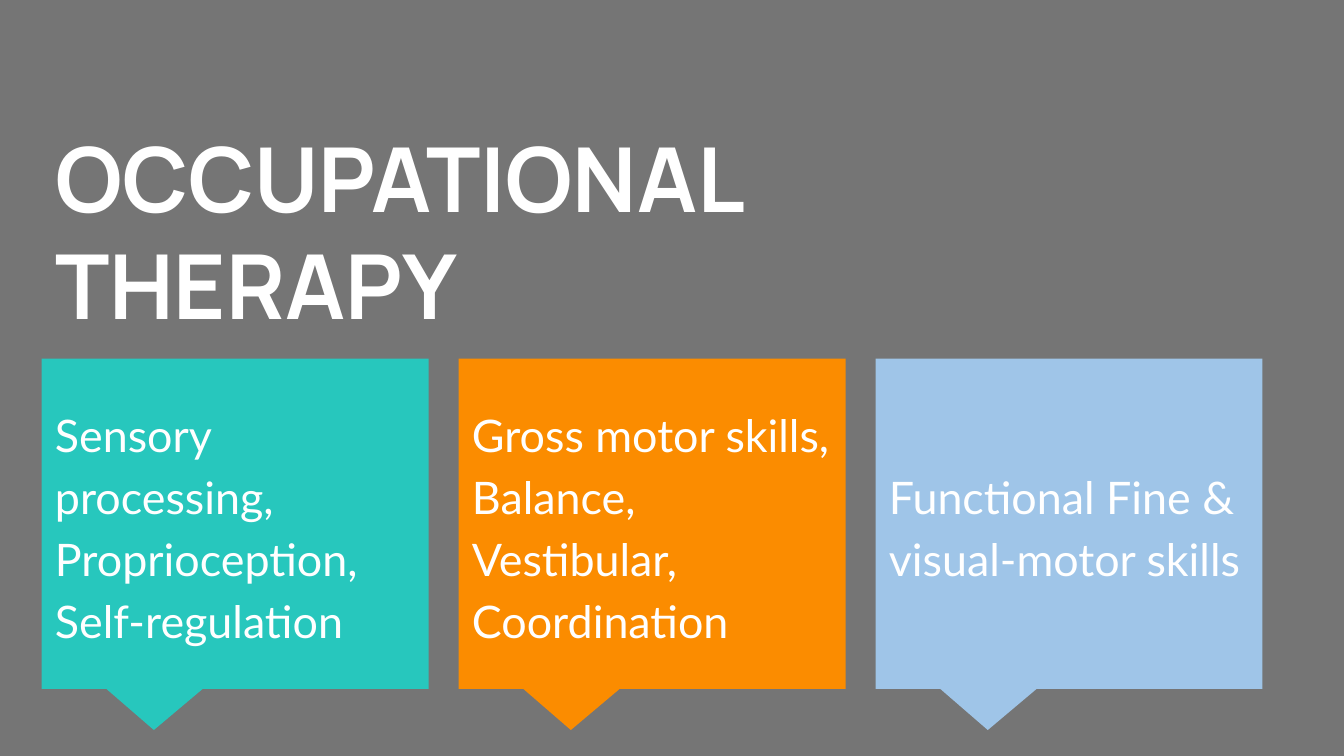
from pptx import Presentation
from pptx.dml.color import RGBColor
from pptx.enum.shapes import MSO_SHAPE
from pptx.enum.text import MSO_ANCHOR, PP_ALIGN
from pptx.util import Cm, Pt

GRAY = RGBColor(0x75, 0x75, 0x75)
WHITE = RGBColor(0xFF, 0xFF, 0xFF)
TEAL = RGBColor(0x27, 0xC7, 0xBD)
ORANGE = RGBColor(0xFB, 0x8C, 0x00)
BLUE = RGBColor(0x9F, 0xC5, 0xE8)

TITLE = "OCCUPATIONAL THERAPY"
CARDS = [
    (TEAL, ["Sensory processing, Proprioception, Self-regulation"]),
    (ORANGE, ["Gross motor skills,", "Balance,", "Vestibular,", "Coordination"]),
    (BLUE, ["Functional Fine &", "visual-motor skills"]),
]

LEFT, TOP = 0.79, 6.78
WIDTH, HEIGHT, STEP = 7.31, 6.24, 7.88
INSET = Cm(0.25)


def write(shape, lines, font, size, bold=False, gap=1.0):
    frame = shape.text_frame
    frame.word_wrap = True
    frame.vertical_anchor = MSO_ANCHOR.MIDDLE
    frame.margin_left = frame.margin_right = INSET
    frame.margin_top = frame.margin_bottom = INSET
    frame.text = "\n".join(lines)
    for para in frame.paragraphs:
        para.alignment = PP_ALIGN.LEFT
        para.line_spacing = gap
        para.space_before = Pt(0)
        for run in para.runs:
            run.font.name = font
            run.font.size = Pt(size)
            run.font.bold = bold
            run.font.color.rgb = WHITE


def add_card(slide, index, color, lines):
    card = slide.shapes.add_shape(
        MSO_SHAPE.RECTANGULAR_CALLOUT,
        Cm(LEFT + index * STEP), Cm(TOP), Cm(WIDTH), Cm(HEIGHT))
    card.adjustments[0] = -0.21
    card.adjustments[1] = 0.625
    card.shadow.inherit = False
    card.fill.solid()
    card.fill.fore_color.rgb = color
    card.line.fill.background()
    write(card, lines, "Lato", 24, gap=1.15)


def main():
    deck = Presentation()
    deck.slide_width, deck.slide_height = Cm(25.4), Cm(14.29)
    slide = deck.slides.add_slide(deck.slide_layouts[5])
    slide.background.fill.solid()
    slide.background.fill.fore_color.rgb = GRAY

    title = slide.shapes.title
    title.left, title.top = Cm(LEFT), Cm(0.66)
    title.width, title.height = Cm(17.35), Cm(7.39)
    write(title, [TITLE], "Manrope", 48, bold=True)

    for index, (color, lines) in enumerate(CARDS):
        add_card(slide, index, color, lines)
    deck.save("out.pptx")


if __name__ == "__main__":
    main()
